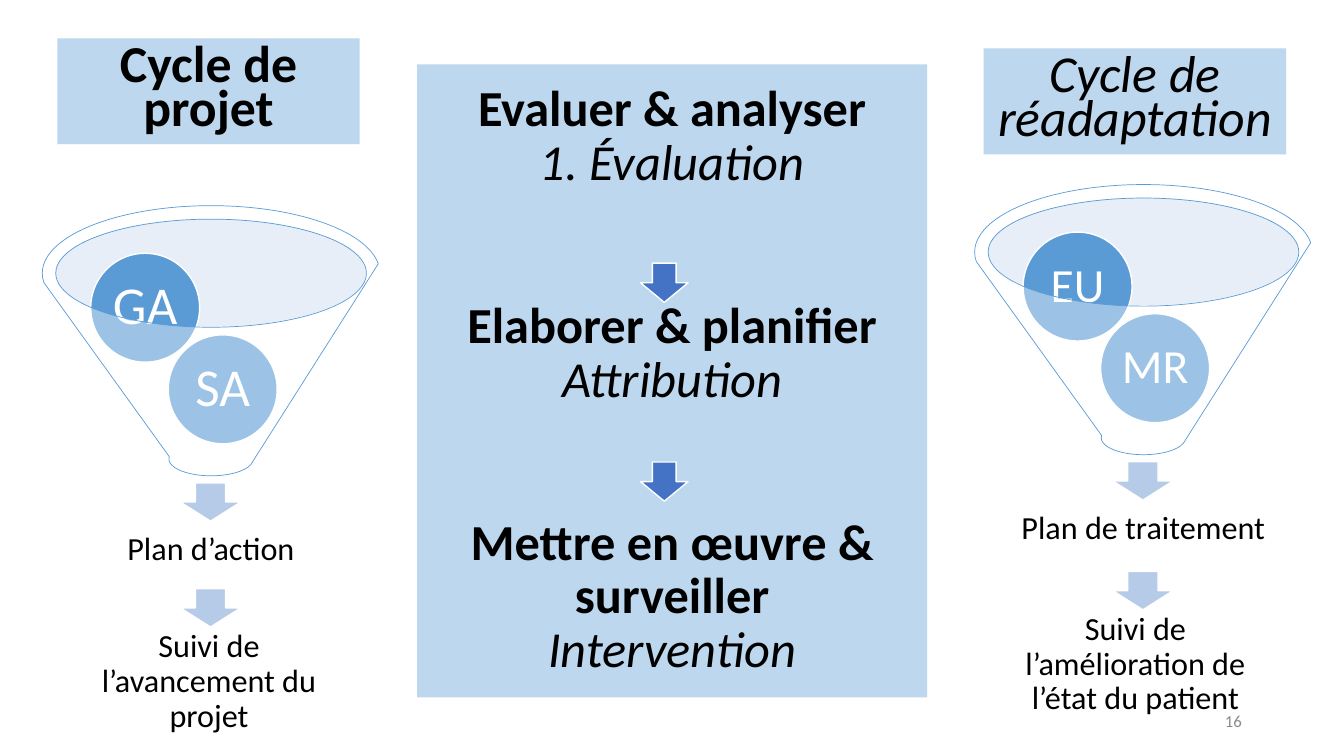
from dataclasses import dataclass

from lxml import etree
from pptx import Presentation
from pptx.dml.color import RGBColor
from pptx.enum.shapes import MSO_SHAPE
from pptx.enum.text import MSO_ANCHOR, MSO_AUTO_SIZE, PP_ALIGN
from pptx.oxml.ns import qn
from pptx.util import Pt

RECTANGLE = MSO_SHAPE.RECTANGLE
OVAL = MSO_SHAPE.OVAL
FUNNEL = MSO_SHAPE.FUNNEL
DOWN_ARROW = MSO_SHAPE.DOWN_ARROW
MIDDLE = MSO_ANCHOR.MIDDLE
CENTER = PP_ALIGN.CENTER
RIGHT = PP_ALIGN.RIGHT
NO_AUTOFIT = MSO_AUTO_SIZE.NONE


@dataclass(frozen=True)
class Theme:
    """Colours, font and type sizes of the slide."""

    font: str = "Calibri"
    black: str = "000000"
    white: str = "FFFFFF"
    grey: str = "8C8C8C"
    panel: str = "BDD7EE"
    bowl: str = "C4D5EB"
    circle: str = "5B9BD5"
    pale_arrow: str = "B5CBE7"
    strong_arrow: str = "4472C4"
    heading_size: float = 37
    title_size: float = 36
    body_size: float = 23
    number_size: float = 12


STAGES = [
    ("Evaluer & analyser", "1. Évaluation"),
    ("Elaborer & planifier", "Attribution"),
    ("Mettre en œuvre & surveiller", "Intervention"),
]

CYCLES = [
    {
        "heading": "Cycle de projet", "heading_at": (41, 27.4), "style": {"bold": True},
        "origin": (30.2, 146.9), "circles": ("GA", "SA"), "circle_size": 38,
        "plan": "Plan d’action", "follow_arrow_top": 420.5,
        "follow": "Suivi de l’avancement du projet", "follow_left": 46.1,
    },
    {
        "heading": "Cycle de réadaptation", "heading_at": (702.7, 34.6), "style": {"italic": True},
        "origin": (696.2, 131.8), "circles": ("EU", "MR"), "circle_size": 34,
        "plan": "Plan de traitement", "follow_arrow_top": 408.2,
        "follow": "Suivi de l’amélioration de l’état du patient", "follow_left": 707.8,
    },
]


class SlideBuilder:
    """Draws styled elements on one slide."""

    def __init__(self, slide, theme):
        """Keep the slide and its theme."""
        self.slide = slide
        self.theme = theme

    def apply(self, target, values):
        """Set every attribute named in values."""
        for name, value in values.items():
            setattr(target, name, value)

    def place(self, shape, box):
        """Move and size a shape in points."""
        names = ("left", "top", "width", "height")
        self.apply(shape, dict(zip(names, map(Pt, box))))

    def fill(self, shape, color, opacity=None):
        """Fill a shape, with an optional opacity in percent."""
        shape.fill.solid()
        shape.fill.fore_color.rgb = RGBColor.from_string(color)
        if opacity is not None:
            element = shape.element.spPr.find(qn("a:solidFill")).find(qn("a:srgbClr"))
            etree.SubElement(element, qn("a:alpha"), val=str(opacity * 1000))

    def frame(self, shape, inset=None):
        """Prepare and return the text frame of a shape."""
        frame = shape.text_frame
        values = {"word_wrap": True, "auto_size": NO_AUTOFIT, "vertical_anchor": MIDDLE}
        if inset is not None:
            sides = ("left", "top", "right", "bottom")
            values.update({f"margin_{side}": Pt(inset) for side in sides})
        self.apply(frame, values)
        return frame

    def run(self, paragraph, text, size, color, **style):
        """Add a formatted run to a paragraph."""
        run = paragraph.add_run()
        run.text = text
        self.apply(run.font, {"name": self.theme.font, "size": Pt(size), **style})
        run.font.color.rgb = RGBColor.from_string(color)

    def label(self, shape, text, size, color, inset=None, spacing=0.9, align=CENTER, **style):
        """Put one paragraph in a shape."""
        paragraph = self.frame(shape, inset).paragraphs[0]
        self.apply(paragraph, {"alignment": align, "line_spacing": spacing})
        self.run(paragraph, text, size, color, **style)

    def shape(self, kind, box, color, opacity=None, line=None, line_width=1):
        """Add a filled preset shape."""
        shape = self.slide.shapes.add_shape(kind, *map(Pt, box))
        shape.shadow.inherit = False
        self.fill(shape, color, opacity)
        if line:
            shape.line.color.rgb = RGBColor.from_string(line)
            shape.line.width = Pt(line_width)
        else:
            shape.line.fill.background()
        return shape

    def text(self, box, text, size, color, **layout):
        """Add a text box."""
        text_box = self.slide.shapes.add_textbox(*map(Pt, box))
        self.label(text_box, text, size, color, **layout)

    def title(self, box, stages, gap):
        """Fill the title panel with the stages."""
        theme = self.theme
        title = self.slide.shapes.title
        self.place(title, box)
        self.fill(title, theme.panel)
        frame = self.frame(title)
        for index, (project_stage, care_stage) in enumerate(stages):
            paragraph = frame.add_paragraph() if index else frame.paragraphs[0]
            self.apply(paragraph, {
                "alignment": CENTER, "line_spacing": 0.89, "space_before": Pt(gap if index else 0),
            })
            self.run(paragraph, project_stage, theme.title_size, theme.black, bold=True)
            paragraph.add_line_break()
            self.run(paragraph, care_stage, theme.title_size, theme.black, bold=False, italic=True)

    def arrow(self, box, color):
        """Add a white-edged down arrow."""
        self.shape(DOWN_ARROW, box, color, line=self.theme.white)

    def cycle(self, cycle):
        """Draw one funnel column with its heading and steps."""
        theme = self.theme
        left, top = cycle["origin"]
        arrow_left = left + 98.6
        self.shape(OVAL, (left + 9.4, top + 9.4, 221.8, 77), theme.bowl, 40)
        self.arrow((arrow_left, top + 198, 43.2, 27.4), theme.pale_arrow)
        self.text((left + 17.3, top + 220.3, 206.6, 51.8), cycle["plan"],
                  theme.body_size, theme.black, inset=13)
        for index, label in reversed(list(enumerate(cycle["circles"]))):
            box = (left + 34.6 + index * 55.4, top + 34 + index * 58.3, 77.8, 77.8)
            circle = self.shape(OVAL, box, theme.circle, line=theme.white)
            self.label(circle, label, cycle["circle_size"], theme.white, inset=3.6)
        self.shape(FUNNEL, (left, top, 241.2, 193), theme.white, 40, theme.circle, 0.5)
        arrow_top = cycle["follow_arrow_top"]
        self.arrow((arrow_left, arrow_top, 43.2, 27.4), theme.pale_arrow)
        self.text((cycle["follow_left"], arrow_top + 40.7, 206.6, 51.8), cycle["follow"],
                  theme.body_size, theme.black, inset=13)
        heading = self.shape(RECTANGLE, (*cycle["heading_at"], 216, 75.6), theme.panel)
        self.label(heading, cycle["heading"], theme.heading_size, theme.black,
                   spacing=0.7, **cycle["style"])


def main():
    """Build and save the slide."""
    presentation = Presentation()
    presentation.slide_width, presentation.slide_height = Pt(960), Pt(540)
    slide = presentation.slides.add_slide(presentation.slide_layouts[5])
    theme = Theme()
    builder = SlideBuilder(slide, theme)
    builder.title((298, 46, 364.3, 452.2), STAGES, 78)
    builder.text((678.2, 500.4, 216, 28.8), "16", theme.number_size, theme.grey,
                 spacing=1, align=RIGHT)
    for cycle in CYCLES:
        builder.cycle(cycle)
    for arrow_top in (188, 330):
        builder.arrow((457.5, arrow_top, 34, 28), theme.strong_arrow)
    presentation.save("out.pptx")


if __name__ == "__main__":
    main()
